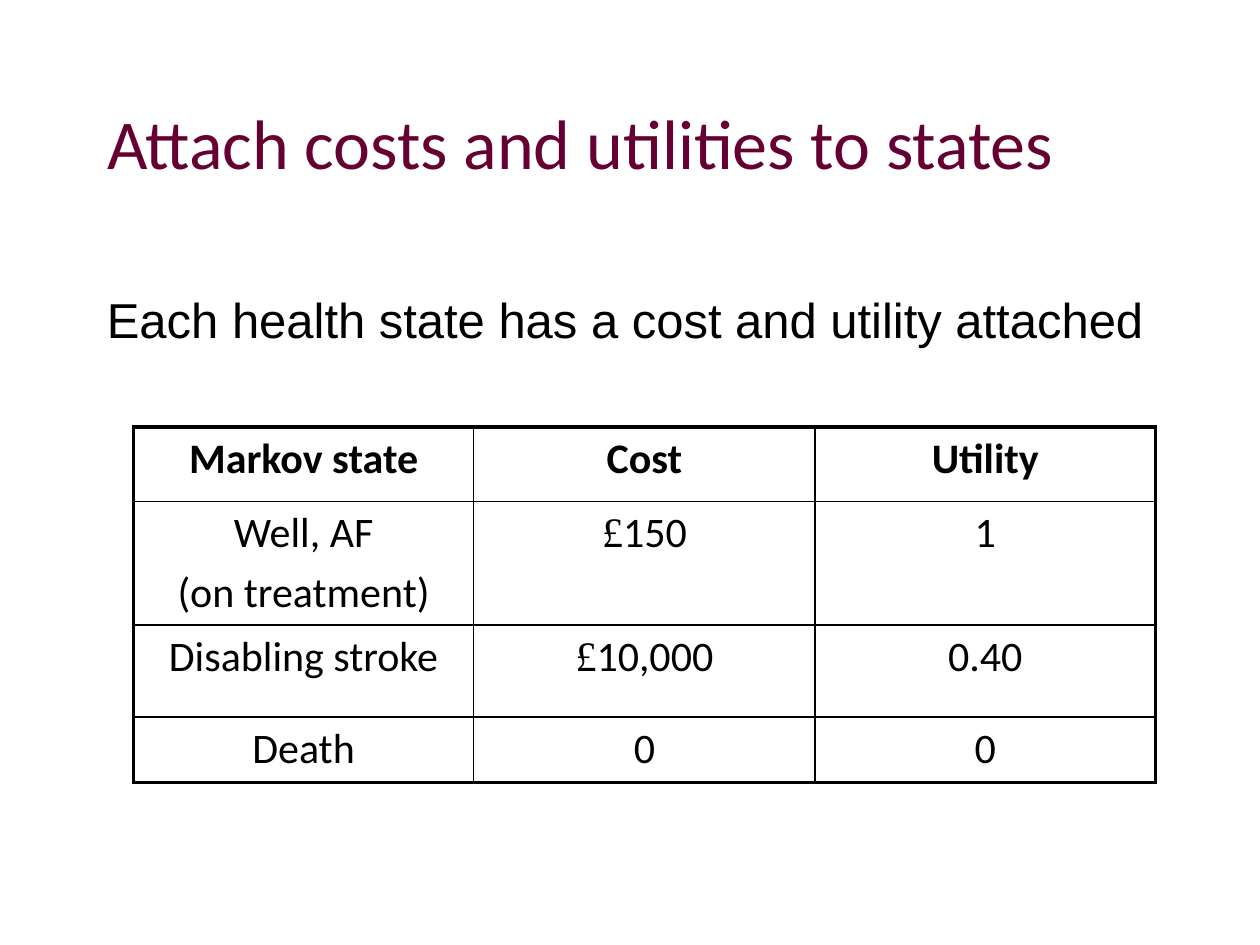
from lxml import etree
from pptx import Presentation
from pptx.dml.color import RGBColor
from pptx.enum.text import MSO_ANCHOR, MSO_AUTO_SIZE, PP_ALIGN
from pptx.oxml.ns import qn
from pptx.util import Inches, Pt

LEFT, MID = PP_ALIGN.LEFT, PP_ALIGN.CENTER
CENTER = MSO_ANCHOR.MIDDLE
GROW = MSO_AUTO_SIZE.SHAPE_TO_FIT_TEXT

TITLE = "Attach costs and utilities to states"
LEAD = "Each health state has a cost and utility attached"
ROWS = [
    ["Markov state", "Cost", "Utility"],
    ["Well, AF\n(on treatment)", "£150", "1"],
    ["Disabling stroke", "£10,000", "0.40"],
    ["Death", "0", "0"],
]
TALL = [0.59, 0.98, 0.73, 0.52]
WIDE = [2.7, 2.71, 2.7]
INK, PLUM = "000000", "660033"
THIN, THICK = 1, 2.25


def paint(font, name, size, color, bold=False):
    font.name, font.size, font.bold = name, Pt(size), bold
    font.color.rgb = RGBColor.from_string(color)


def edge(cell, sides):
    props = cell._tc.get_or_add_tcPr()
    for at, (side, width) in enumerate(sides):
        line = etree.Element(qn("a:ln" + side), w=str(Pt(width)))
        fill = etree.SubElement(line, qn("a:solidFill"))
        etree.SubElement(fill, qn("a:srgbClr"), val=INK)
        props.insert(at, line)


def write(cell, text, bold):
    frame = cell.text_frame
    for i, part in enumerate(text.split("\n")):
        para = frame.add_paragraph() if i else frame.paragraphs[0]
        para.alignment = MID
        if i:
            para.space_before = Pt(4.8)
        paint(para.font, "Calibri", 24, INK, bold)
        if part.startswith("£"):
            sign = para.add_run()
            sign.text = "£"
            sign.font.name = "Times New Roman"
            part = part[1:]
        para.add_run().text = part


deck = Presentation()
deck.slide_width, deck.slide_height = Inches(10), Inches(7.5)
slide = deck.slides.add_slide(deck.slide_layouts[5])

title = slide.shapes.title
title.left, title.top = Inches(0.75), Inches(0.5)
title.width, title.height = Inches(8.5), Inches(1.25)
title.text_frame.text = TITLE
title.text_frame.vertical_anchor = CENTER
head = title.text_frame.paragraphs[0]
head.alignment = LEFT
paint(head.font, "Calibri", 40, PLUM)

grid = slide.shapes.add_table(
    len(ROWS), len(WIDE), Inches(1.06), Inches(3.39),
    Inches(sum(WIDE)), Inches(sum(TALL))).table
grid.first_row = grid.horz_banding = False
for col, wide in zip(grid.columns, WIDE):
    col.width = Inches(wide)
last, end = len(ROWS) - 1, len(WIDE) - 1
for r, row in enumerate(ROWS):
    grid.rows[r].height = Inches(TALL[r])
    for c, text in enumerate(row):
        cell = grid.cell(r, c)
        cell.fill.background()
        write(cell, text, r == 0)
        rim = [("L", c == 0), ("R", c == end), ("T", r == 0), ("B", r == last)]
        edge(cell, [(side, THICK if out else THIN) for side, out in rim])

box = slide.shapes.add_textbox(
    Inches(0.75), Inches(2.25), Inches(8.45), Inches(0.57))
box.text_frame.word_wrap = False
box.text_frame.auto_size = GROW
lead = box.text_frame.paragraphs[0]
lead.text = LEAD
paint(lead.font, "Arial", 28, INK)

deck.save("out.pptx")
